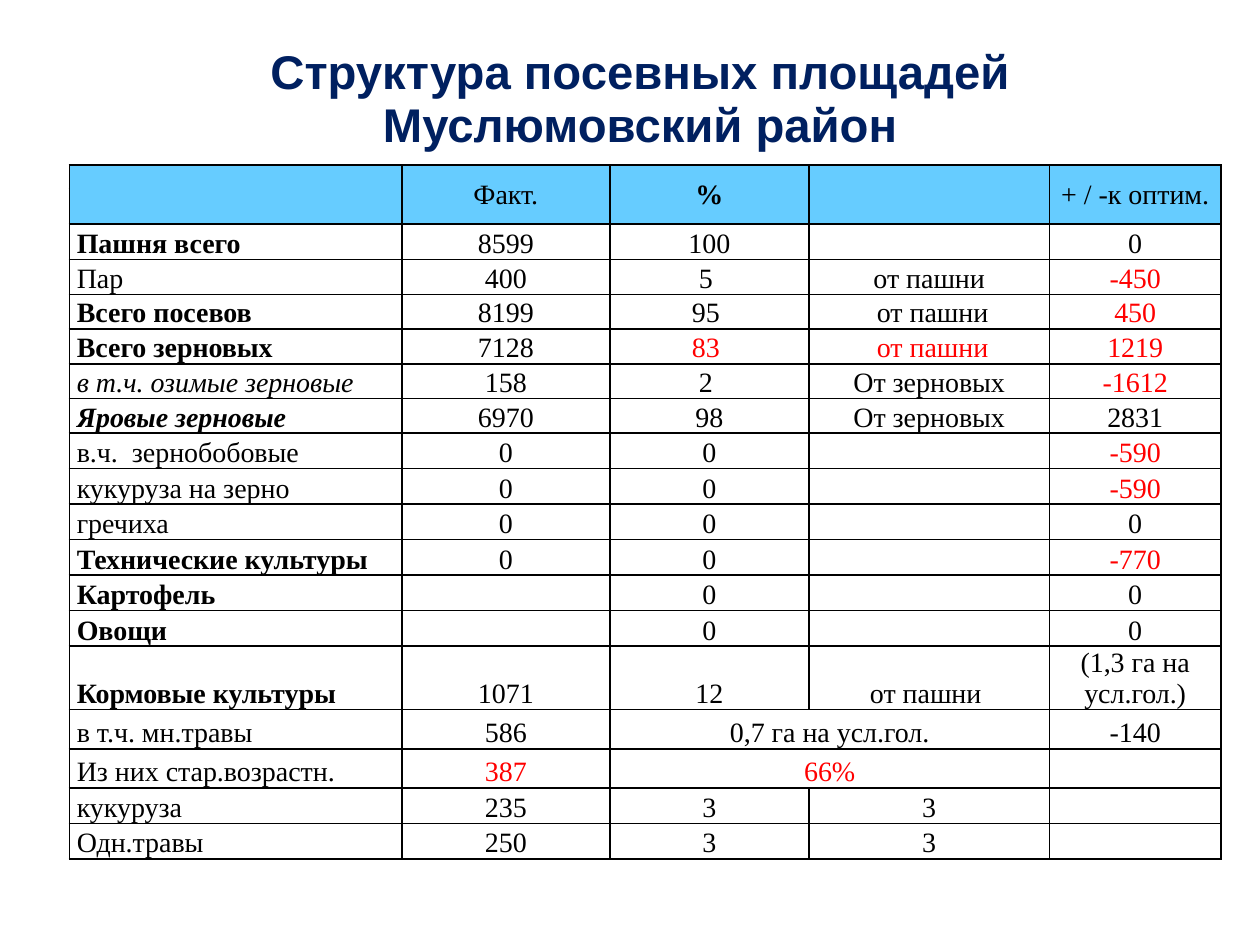
"""Build a slide with the crop area structure of a district."""
from typing import NamedTuple

from lxml import etree
from pptx import Presentation
from pptx.dml.color import RGBColor
from pptx.enum.text import MSO_ANCHOR, PP_ALIGN
from pptx.oxml.ns import qn
from pptx.util import Inches, Pt

BOTTOM, MIDDLE = MSO_ANCHOR.BOTTOM, MSO_ANCHOR.MIDDLE
LEFT, CENTER = PP_ALIGN.LEFT, PP_ALIGN.CENTER
BLACK, RED, NAVY, SKY = "000000", "FF0000", "002060", "66CCFF"
ALL_SIDES = ("a:lnL", "a:lnR", "a:lnT", "a:lnB")
BOTTOM_SIDE = ("a:lnB",)
TITLE = ("Структура посевных площадей", "Муслюмовский район")
TITLE_WIDTHS = (3.24, 1.47, 1.3, 1.31, 1.74)
TITLE_HEIGHTS = (0.45, 0.24)
HEADER = ("", "Факт.", "%", "", "+ / -к оптим.")
CROP_WIDTHS = (2.64, 1.65, 1.58, 1.91, 1.36)
HEADER_HEIGHT = 0.47
TABLE_LEFT = 0.55
ROW_HEIGHT = 5.51 / 20


class Crop(NamedTuple):
    """One table row; a value of None continues the cell to its left."""

    label: str
    values: tuple
    red: tuple = ()
    bold: bool = False
    italic: bool = False
    height: float = ROW_HEIGHT


CROPS = (
    Crop("Пашня всего", ("8599", "100", "", "0"), bold=True),
    Crop("Пар", ("400", "5 ", "от пашни", "-450"), red=(4,)),
    Crop("Всего посевов", ("8199", "95 ", " от пашни", "450"), red=(4,), bold=True),
    Crop("Всего зерновых", ("7128", "83 ", " от пашни", "1219"), red=(2, 3, 4), bold=True),
    Crop("в т.ч. озимые зерновые", ("158", "2 ", "От зерновых", "-1612"), red=(4,), italic=True),
    Crop("Яровые зерновые", ("6970", "98", "От зерновых", "2831"), bold=True, italic=True),
    Crop("в.ч.  зернобобовые", ("0", "0", "", "-590"), red=(4,)),
    Crop("кукуруза на зерно", ("0", "0", "", "-590"), red=(4,)),
    Crop("гречиха", ("0", "0", "", "0")),
    Crop("Технические культуры", ("0", "0", "", "-770"), red=(4,), bold=True),
    Crop("Картофель", ("", "0", "", "0"), bold=True),
    Crop("Овощи", ("", "0", "", "0"), bold=True),
    Crop("Кормовые культуры", ("1071", "12", "от пашни ", "(1,3 га на усл.гол.)"),
         bold=True, height=0.38),
    Crop("в т.ч. мн.травы", ("586", "0,7 га на усл.гол.", None, "-140"), height=0.31),
    Crop("Из них стар.возрастн.", ("387", "66%", None, ""), red=(1, 2), height=0.31),
    Crop("кукуруза", ("235", "3", "3", "")),
    Crop("Одн.травы", ("250", "3", "3", "")),
)


def write(para, text: str, *, font: str = "Times New Roman", size: float = 16,
          color: str = BLACK, bold: bool = False, italic: bool = False,
          align=CENTER) -> None:
    """Put formatted text in a paragraph; an empty one only keeps its size."""
    para.alignment = align
    if not text:
        para._p.get_or_add_endParaRPr().set("sz", str(int(size * 100)))
        return
    span = para.add_run()
    span.text = text
    span.font.name, span.font.size = font, Pt(size)
    span.font.bold, span.font.italic = bold, italic
    span.font.color.rgb = RGBColor.from_string(color)


def set_borders(cell, sides: tuple, width: float) -> None:
    """Draw a solid black line on the given sides of a cell."""
    properties = cell._tc.get_or_add_tcPr()
    for position, side in enumerate(sides):
        line = etree.Element(qn(side), w=str(Pt(width)))
        fill = etree.SubElement(line, qn("a:solidFill"))
        etree.SubElement(fill, qn("a:srgbClr"), val=BLACK)
        properties.insert(position, line)


def fill_cell(cell, *lines: str, anchor=BOTTOM, side: float = 0.01,
              top: float = 0.01, fill: str = "", borders: tuple = ALL_SIDES,
              line_width: float = 1, **style) -> None:
    """Format one cell and write each line as a paragraph."""
    cell.vertical_anchor = anchor
    cell.margin_left = cell.margin_right = Inches(side)
    cell.margin_top, cell.margin_bottom = Inches(top), 0
    if fill:
        cell.fill.solid()
        cell.fill.fore_color.rgb = RGBColor.from_string(fill)
    else:
        cell.fill.background()
    set_borders(cell, borders, line_width)
    frame = cell.text_frame
    for index, text in enumerate(lines):
        para = frame.add_paragraph() if index else frame.paragraphs[0]
        write(para, text, **style)


def add_grid(page, top: float, widths: tuple, heights: tuple):
    """Add a plain table with the given column widths and row heights."""
    table = page.shapes.add_table(
        len(heights), len(widths), Inches(TABLE_LEFT), Inches(top),
        Inches(sum(widths)), Inches(sum(heights))).table
    table.first_row = table.horz_banding = False
    for column, width in zip(table.columns, widths):
        column.width = Inches(width)
    for row, height in zip(table.rows, heights):
        row.height = Inches(height)
    return table


def add_title_table(page) -> None:
    """Add the two-line title as a merged row above an underlined row."""
    table = add_grid(page, 0.36, TITLE_WIDTHS, TITLE_HEIGHTS)
    title = table.cell(0, 0)
    title.merge(table.cell(0, len(TITLE_WIDTHS) - 1))
    fill_cell(title, *TITLE, borders=(), font="Arial", size=27, color=NAVY, bold=True)
    for column in range(len(TITLE_WIDTHS)):
        fill_cell(table.cell(1, column), "", borders=BOTTOM_SIDE, line_width=0.5)


def add_crop_table(page) -> None:
    """Add the table of crops with its header."""
    heights = (HEADER_HEIGHT, *(crop.height for crop in CROPS))
    table = add_grid(page, 1.31, CROP_WIDTHS, heights)
    for column, text in enumerate(HEADER):
        fill_cell(table.cell(0, column), text, anchor=MIDDLE, side=0.06, top=0,
                  fill=SKY, bold=text == "%")
    for row, crop in enumerate(CROPS, 1):
        fill_cell(table.cell(row, 0), crop.label, side=0.06, top=0, align=LEFT,
                  bold=crop.bold, italic=crop.italic)
        for column, text in enumerate(crop.values, 1):
            cell = table.cell(row, column)
            fill_cell(cell, text or "", color=RED if column in crop.red else BLACK)
            if text is None:
                table.cell(row, column - 1).merge(cell)


def main() -> None:
    """Build and save the deck."""
    deck = Presentation()
    deck.slide_width, deck.slide_height = Inches(10), Inches(7.5)
    page = deck.slides.add_slide(deck.slide_layouts.get_by_name("Blank"))
    add_title_table(page)
    add_crop_table(page)
    deck.save("out.pptx")


if __name__ == "__main__":
    main()
